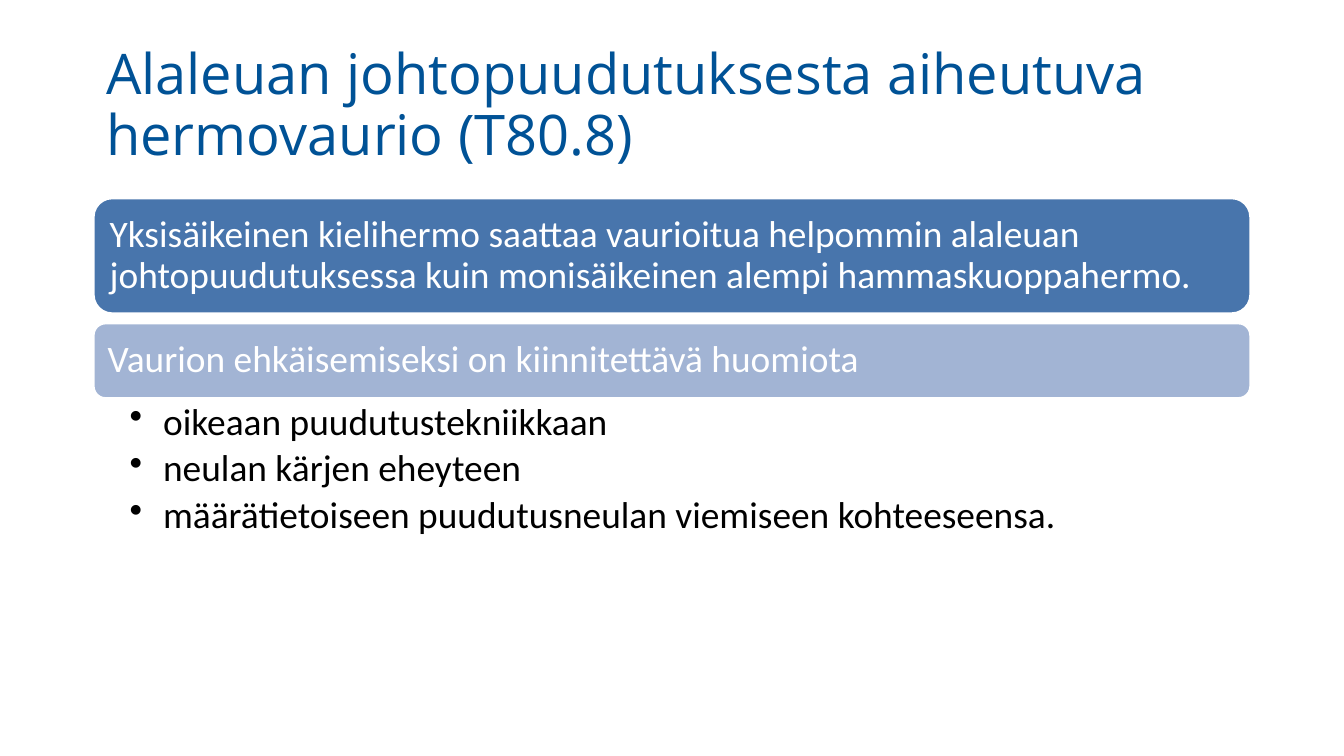
"""Build a slide on nerve injury caused by mandibular block anaesthesia."""
from dataclasses import dataclass

from lxml import etree
from pptx import Presentation
from pptx.dml.color import RGBColor
from pptx.enum.shapes import MSO_SHAPE
from pptx.enum.text import MSO_ANCHOR, PP_ALIGN
from pptx.oxml.ns import qn
from pptx.util import Pt

ROUNDED = MSO_SHAPE.ROUNDED_RECTANGLE
MIDDLE, TOP = MSO_ANCHOR.MIDDLE, MSO_ANCHOR.TOP
LEFT = PP_ALIGN.LEFT


@dataclass(frozen=True)
class Theme:
    title_font: str = "Open Sans"
    body_font: str = "Calibri"
    title_size: int = 30
    body_size: int = 20
    title: RGBColor = RGBColor(0x00, 0x52, 0x96)
    white: RGBColor = RGBColor(0xFF, 0xFF, 0xFF)
    black: RGBColor = RGBColor(0x00, 0x00, 0x00)
    strong: RGBColor = RGBColor(0x48, 0x75, 0xAC)
    pale: RGBColor = RGBColor(0xA2, 0xB4, 0xD4)


theme = Theme()


def set_frame(frame, anchor, left, top, right, bottom):
    frame.word_wrap = True
    frame.vertical_anchor = anchor
    frame.margin_left, frame.margin_top = Pt(left), Pt(top)
    frame.margin_right, frame.margin_bottom = Pt(right), Pt(bottom)


def style(para, font, size, color, after=0):
    para.alignment = LEFT
    para.line_spacing = 0.9
    para.space_before, para.space_after = Pt(0), Pt(after)
    para.font.name, para.font.size = font, Pt(size)
    para.font.color.rgb = color


edge, width = 49.7, 620.6

deck = Presentation()
deck.slide_width, deck.slide_height = Pt(720), Pt(405)
page = deck.slides.add_slide(deck.slide_layouts[5])

title = page.shapes.title
title.left, title.top, title.width, title.height = Pt(edge), Pt(17.3), Pt(width), Pt(80)
title.text_frame.text = "Alaleuan johtopuudutuksesta aiheutuva hermovaurio (T80.8)"
set_frame(title.text_frame, MIDDLE, 7.2, 3.6, 7.2, 3.6)
style(title.text_frame.paragraphs[0], theme.title_font, theme.title_size, theme.title)

banners = [
    (105.8, 62.6, theme.strong,
     "Yksisäikeinen kielihermo saattaa vaurioitua helpommin alaleuan "
     "johtopuudutuksessa kuin monisäikeinen alempi hammaskuoppahermo."),
    (172.8, 41, theme.pale, "Vaurion ehkäisemiseksi on kiinnitettävä huomiota"),
]
for top, height, color, text in banners:
    banner = page.shapes.add_shape(ROUNDED, Pt(edge), Pt(top), Pt(width), Pt(height))
    banner.shadow.inherit = False
    banner.fill.solid()
    banner.fill.fore_color.rgb = color
    banner.line.color.rgb = theme.white
    banner.line.width = Pt(2)
    banner.text_frame.text = text
    set_frame(banner.text_frame, MIDDLE, 6, 6, 6, 6)
    style(banner.text_frame.paragraphs[0], theme.body_font, theme.body_size, theme.white)

points = [
    "oikeaan puudutustekniikkaan",
    "neulan kärjen eheyteen",
    "määrätietoiseen puudutusneulan viemiseen kohteeseensa.",
]
box = page.shapes.add_textbox(Pt(edge), Pt(213.8), Pt(width), Pt(80))
set_frame(box.text_frame, TOP, 19.7, 2, 11.5, 2)
box.text_frame.text = "\n".join(points)
for para in box.text_frame.paragraphs:
    properties = para._p.get_or_add_pPr()
    properties.set("marL", str(Pt(18)))
    properties.set("indent", str(Pt(-18)))
    etree.SubElement(properties, qn("a:buChar"), char="•")
    style(para, theme.body_font, theme.body_size, theme.black, after=3.5)

deck.save("out.pptx")
